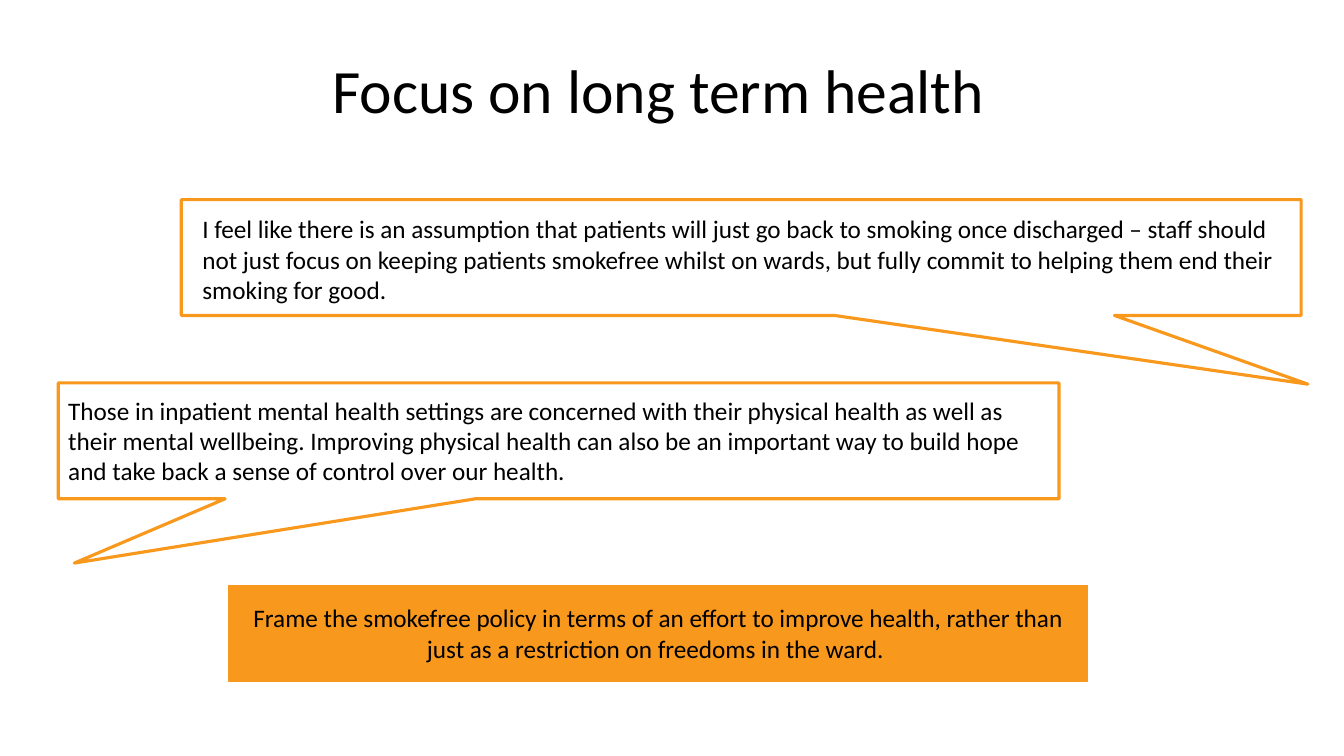
from dataclasses import dataclass

from pptx import Presentation
from pptx.dml.color import RGBColor
from pptx.enum.shapes import MSO_SHAPE
from pptx.enum.text import MSO_ANCHOR, MSO_AUTO_SIZE, PP_ALIGN
from pptx.shapes.autoshape import Shape
from pptx.slide import Slide
from pptx.text.text import TextFrame
from pptx.util import Cm, Pt

RECTANGLE = MSO_SHAPE.RECTANGLE
CALLOUT = MSO_SHAPE.RECTANGULAR_CALLOUT
LEFT, CENTER = PP_ALIGN.LEFT, PP_ALIGN.CENTER
TOP, MIDDLE = MSO_ANCHOR.TOP, MSO_ANCHOR.MIDDLE
GROW = MSO_AUTO_SIZE.SHAPE_TO_FIT_TEXT
TITLE_ONLY = 5


@dataclass(frozen=True)
class Theme:
    font: str = "Calibri"
    ink: RGBColor = RGBColor(0x00, 0x00, 0x00)
    paper: RGBColor = RGBColor(0xFF, 0xFF, 0xFF)
    accent: RGBColor = RGBColor(0xF8, 0x98, 0x1D)
    title_size: float = 44
    body_size: float = 18


THEME = Theme()


@dataclass(frozen=True)
class Area:
    """Left, top, width and height in centimetres."""
    left: float
    top: float
    width: float
    height: float

    def lengths(self) -> tuple[Cm, Cm, Cm, Cm]:
        return Cm(self.left), Cm(self.top), Cm(self.width), Cm(self.height)


@dataclass(frozen=True)
class Statement:
    """A panel with the text that lies on it."""
    panel: Area
    text_area: Area
    text: str
    fill: RGBColor = THEME.paper
    line_width: float = 2.25
    tip: tuple[float, float] | None = None
    align: PP_ALIGN = LEFT


TITLE_AREA = Area(5.18, 0.51, 22.83, 3.68)

STATEMENTS = [
    Statement(
        Area(4.57, 5.03, 28.22, 2.92), Area(4.85, 5.26, 28.22, 2.57),
        "I feel like there is an assumption that patients will just go back to "
        "smoking once discharged – staff should not just focus on keeping "
        "patients smokefree whilst on wards, but fully commit to helping them "
        "end their smoking for good.",
        tip=(0.506, 1.093),
    ),
    Statement(
        Area(1.47, 9.65, 25.22, 2.92), Area(1.47, 9.83, 25.22, 2.57),
        "Those in inpatient mental health settings are concerned with their "
        "physical health as well as their mental wellbeing. Improving physical "
        "health can also be an important way to build hope and take back a "
        "sense of control over our health.",
        tip=(-0.484, 1.055),
    ),
    Statement(
        Area(5.77, 14.76, 21.64, 2.41), Area(5.77, 15.06, 21.64, 1.8),
        "Frame the smokefree policy in terms of an effort to improve health, "
        "rather than just as a restriction on freedoms in the ward. ",
        fill=THEME.accent, line_width=1, align=CENTER,
    ),
]


def write_text(frame: TextFrame, text: str, *, size: float = THEME.body_size,
               align: PP_ALIGN = LEFT, anchor: MSO_ANCHOR = TOP,
               line_spacing: float = 1.0) -> None:
    frame.word_wrap = True
    frame.vertical_anchor = anchor
    para = frame.paragraphs[0]
    para.alignment = align
    para.line_spacing = line_spacing
    span = para.add_run()
    span.text = text
    span.font.name = THEME.font
    span.font.size = Pt(size)
    span.font.color.rgb = THEME.ink


def add_panel(page: Slide, statement: Statement) -> Shape:
    kind = CALLOUT if statement.tip else RECTANGLE
    panel = page.shapes.add_shape(kind, *statement.panel.lengths())
    panel.shadow.inherit = False
    panel.fill.solid()
    panel.fill.fore_color.rgb = statement.fill
    panel.line.color.rgb = THEME.accent
    panel.line.width = Pt(statement.line_width)
    for index, offset in enumerate(statement.tip or ()):
        panel.adjustments[index] = offset
    return panel


def add_statement(page: Slide, statement: Statement) -> None:
    add_panel(page, statement)
    box = page.shapes.add_textbox(*statement.text_area.lengths())
    write_text(box.text_frame, statement.text, align=statement.align)
    box.text_frame.auto_size = GROW


def add_title(page: Slide, text: str) -> None:
    title = page.shapes.title
    title.left, title.top, title.width, title.height = TITLE_AREA.lengths()
    write_text(title.text_frame, text, size=THEME.title_size, align=CENTER,
               anchor=MIDDLE, line_spacing=0.9)


def main() -> None:
    deck = Presentation()
    deck.slide_width, deck.slide_height = Cm(33.87), Cm(19.05)
    page = deck.slides.add_slide(deck.slide_layouts[TITLE_ONLY])

    # Heading
    add_title(page, "Focus on long term health")

    # Two quotations and the closing advice
    for statement in STATEMENTS:
        add_statement(page, statement)

    deck.save("out.pptx")


if __name__ == "__main__":
    main()
